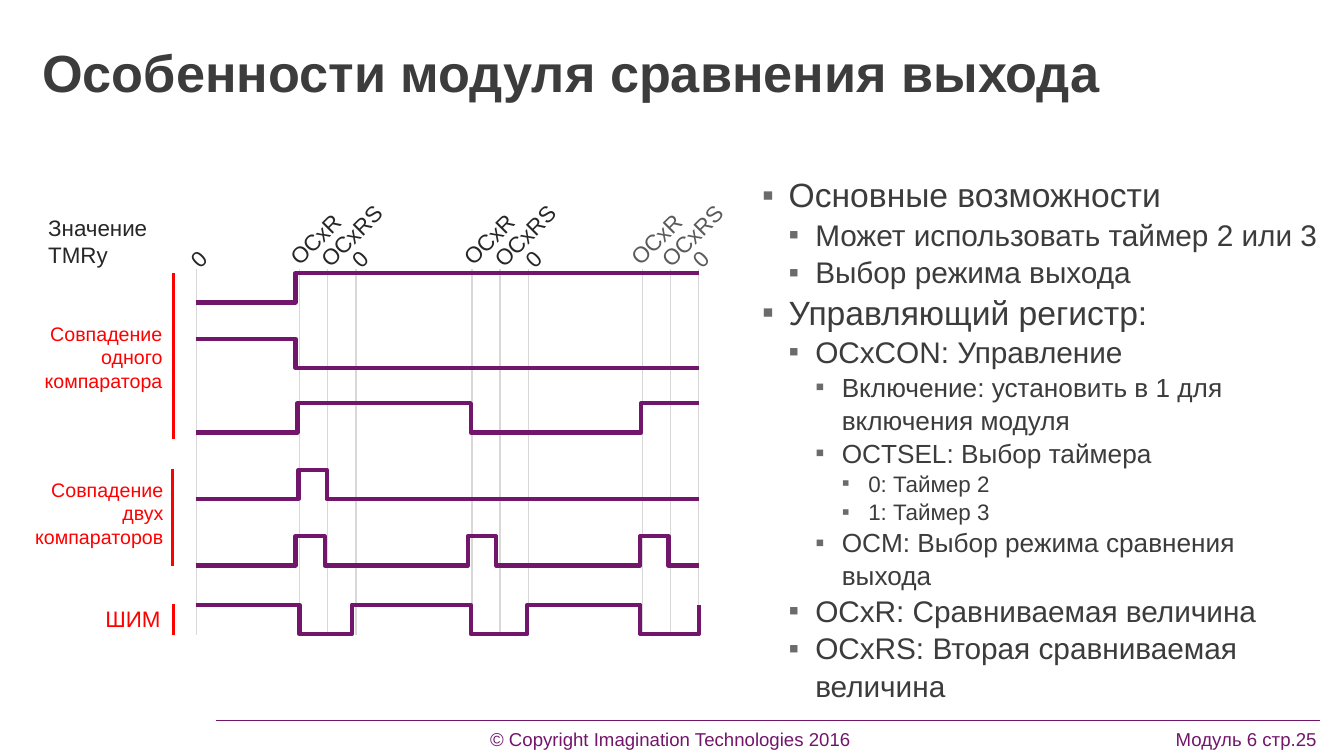
"""Build the slide on output compare module features."""
from itertools import product

from lxml.etree import SubElement
from pptx import Presentation
from pptx.dml.color import RGBColor
from pptx.enum.shapes import MSO_CONNECTOR
from pptx.enum.text import MSO_ANCHOR, MSO_AUTO_SIZE, PP_ALIGN
from pptx.oxml.ns import qn
from pptx.util import Inches, Pt

PURPLE = RGBColor(0x72, 0x16, 0x6B)
RED = RGBColor(0xFF, 0x00, 0x00)
DARK = RGBColor(0x3C, 0x3C, 0x3C)
BLACK = RGBColor(0x26, 0x26, 0x26)
GRAY = RGBColor(0x5A, 0x5A, 0x5A)
GRID = RGBColor(0xD8, 0xD8, 0xD8)
BULLET = "6B6B6B"
FONT = "Arial"

TITLE = "Особенности модуля сравнения выхода"
FOOTER = "\t© Copyright Imagination Technologies 2016\tМодуль 6 стр.25"
BODY = [
    (0, "Основные возможности"),
    (1, "Может использовать таймер 2 или 3"),
    (1, "Выбор режима выхода"),
    (0, "Управляющий регистр:"),
    (1, "OCxCON: Управление"),
    (2, "Включение: установить в 1 для включения модуля"),
    (2, "OCTSEL: Выбор таймера"),
    (3, "0: Таймер 2"),
    (3, "1: Таймер 3"),
    (2, "OCM: Выбор режима сравнения выхода"),
    (1, "OCxR: Сравниваемая величина"),
    (1, "OCxRS: Вторая сравниваемая величина"),
]
LEVEL_SIZES = (24, 21.3, 18.7, 16)
LEVEL_INDENT = 0.263

WAVE_LEFT, WAVE_RIGHT, WAVE_HEIGHT = 1.94, 6.93, 0.29
GRID_TOP, GRID_BOTTOM = 2.67, 6.3
PERIOD_STARTS = (2.97, 4.68, 6.37)
MARK_STEP = 0.28
WAVES = [
    (2.71, False, [2.93]),
    (3.36, True, [2.93]),
    (4.0, False, [2.95, 4.67, 6.36]),
    (4.66, False, [2.96, 3.24]),
    (5.32, False, [2.93, 3.22, 4.64, 4.92, 6.35, 6.63]),
    (6.0, True, [2.97, 3.49, 4.67, 5.23, 6.35, 6.93]),
]
MARK_LABELS = [("OCxR", 2.05), ("OCxRS", 2.07), ("0", 2.08)]
LABEL_PERIODS = [(2.67, BLACK), (4.39, BLACK), (6.05, GRAY)]
LABEL_STEP, LABEL_WIDTH, LABEL_HEIGHT = 0.305, 1.19, 0.37
MODES = [
    ("Совпадение одного компаратора", (0.22, 3.14, 1.49, 0.79), 14, (1.72, 2.71, 4.36)),
    ("Совпадение двух компараторов", (0.22, 4.69, 1.5, 0.79), 14, (1.71, 4.65, 5.62)),
    ("ШИМ", (0.6, 5.95, 1.09, 0.36), 16, (1.72, 5.99, 6.3)),
]


def style(paragraph, size, color, bold=False):
    for run in paragraph.runs:
        run.font.name = FONT
        run.font.size = Pt(size)
        run.font.color.rgb = color
        run.font.bold = bold


def clear_margins(text_frame):
    text_frame.margin_left = text_frame.margin_right = 0
    text_frame.margin_top = text_frame.margin_bottom = 0


def add_text(slide, text, box, size, color, align=PP_ALIGN.LEFT, rotation=0):
    shape = slide.shapes.add_textbox(*map(Inches, box))
    shape.rotation = rotation
    shape.text_frame.word_wrap = True
    shape.text_frame.text = text
    paragraph = shape.text_frame.paragraphs[0]
    paragraph.alignment = align
    style(paragraph, size, color)
    return shape


def add_line(slide, start, end, color, width):
    line = slide.shapes.add_connector(
        MSO_CONNECTOR.STRAIGHT, *map(Inches, start + end))
    line.line.color.rgb = color
    line.line.width = Pt(width)
    SubElement(line._element.spPr, qn("a:effectLst"))


def add_title(slide):
    title = slide.shapes.title
    title.left, title.top, title.width, title.height = map(
        Inches, (0.42, 0.49, 12.68, 0.47))
    frame = title.text_frame
    frame.text = TITLE
    clear_margins(frame)
    frame.word_wrap = False
    frame.auto_size = MSO_AUTO_SIZE.NONE
    frame.vertical_anchor = MSO_ANCHOR.TOP
    paragraph = frame.paragraphs[0]
    paragraph.alignment = PP_ALIGN.LEFT
    paragraph.line_spacing = 0.85
    style(paragraph, 37.3, DARK, bold=True)


def add_footer(slide):
    add_line(slide, (2.14, 7.15), (13.09, 7.15), PURPLE, 0.5)
    footer = add_text(slide, FOOTER, (0.24, 7.25, 12.86, 0.2), 13.3, PURPLE)
    clear_margins(footer.text_frame)
    paragraph = footer.text_frame.paragraphs[0]
    paragraph.line_spacing = 0.9
    tabs = SubElement(paragraph._p.get_or_add_pPr(), qn("a:tabLst"))
    for position, align in ((6.41, "ctr"), (12.82, "r")):
        SubElement(tabs, qn("a:tab"), pos=str(Inches(position)), algn=align)


def add_body(slide):
    frame = slide.shapes.add_textbox(
        *map(Inches, (7.56, 1.71, 5.62, 5.22))).text_frame
    frame.word_wrap = True
    clear_margins(frame)
    frame.text = "\n".join(text for _, text in BODY)
    for paragraph, (level, _) in zip(frame.paragraphs, BODY):
        paragraph.level = level
        paragraph.line_spacing = 1.05
        properties = paragraph._p.get_or_add_pPr()
        properties.set("marL", str(Inches(LEVEL_INDENT * (level + 1))))
        properties.set("indent", str(-Inches(LEVEL_INDENT)))
        color = SubElement(properties, qn("a:buClr"))
        SubElement(color, qn("a:srgbClr"), val=BULLET)
        SubElement(properties, qn("a:buFont"), typeface=FONT)
        SubElement(properties, qn("a:buChar"), char="▪")
        style(paragraph, LEVEL_SIZES[level], DARK)


def add_wave(slide, top, high, edges):
    levels = {True: top, False: top + WAVE_HEIGHT}
    points = []
    for x in edges:
        points += [(x, levels[high]), (x, levels[not high])]
        high = not high
    if edges[-1] < WAVE_RIGHT:
        points.append((WAVE_RIGHT, levels[high]))
    first_y = points[0][1]
    builder = slide.shapes.build_freeform(Inches(WAVE_LEFT), Inches(first_y))
    builder.add_line_segments(
        [(Inches(x), Inches(y)) for x, y in points], close=False)
    wave = builder.convert_to_shape()
    wave.shadow.inherit = False
    wave.fill.background()
    wave.line.color.rgb = PURPLE
    wave.line.width = Pt(3)
    SubElement(wave.line._get_or_add_ln(), qn("a:round"))


def add_timing_diagram(slide):
    marks = [start + MARK_STEP * step for start, step in product(PERIOD_STARTS, range(3))]
    for x in [WAVE_LEFT + 0.01] + marks:
        add_line(slide, (x, GRID_TOP), (x, GRID_BOTTOM), GRID, 1)
    for wave in WAVES:
        add_wave(slide, *wave)

    add_text(slide, "Значение TMRy", (0.38, 2.08, 1.33, 0.62), 16, BLACK)
    labels = [("0", 1.68, 2.08, BLACK)]
    for left, color in LABEL_PERIODS:
        for step, (text, top) in enumerate(MARK_LABELS):
            labels.append((text, left + LABEL_STEP * step, top, color))
    for text, left, top, color in labels:
        box = (left, top, LABEL_WIDTH, LABEL_HEIGHT)
        add_text(slide, text, box, 16, color, rotation=315)

    for text, box, size, (x, top, bottom) in MODES:
        add_text(slide, text, box, size, RED, PP_ALIGN.RIGHT)
        add_line(slide, (x, top), (x, bottom), RED, 2.25)


def main():
    presentation = Presentation()
    presentation.slide_width = Inches(13.33)
    presentation.slide_height = Inches(7.5)
    slide = presentation.slides.add_slide(presentation.slide_layouts[5])
    add_title(slide)
    add_footer(slide)
    add_body(slide)
    add_timing_diagram(slide)
    presentation.save("out.pptx")


if __name__ == "__main__":
    main()
